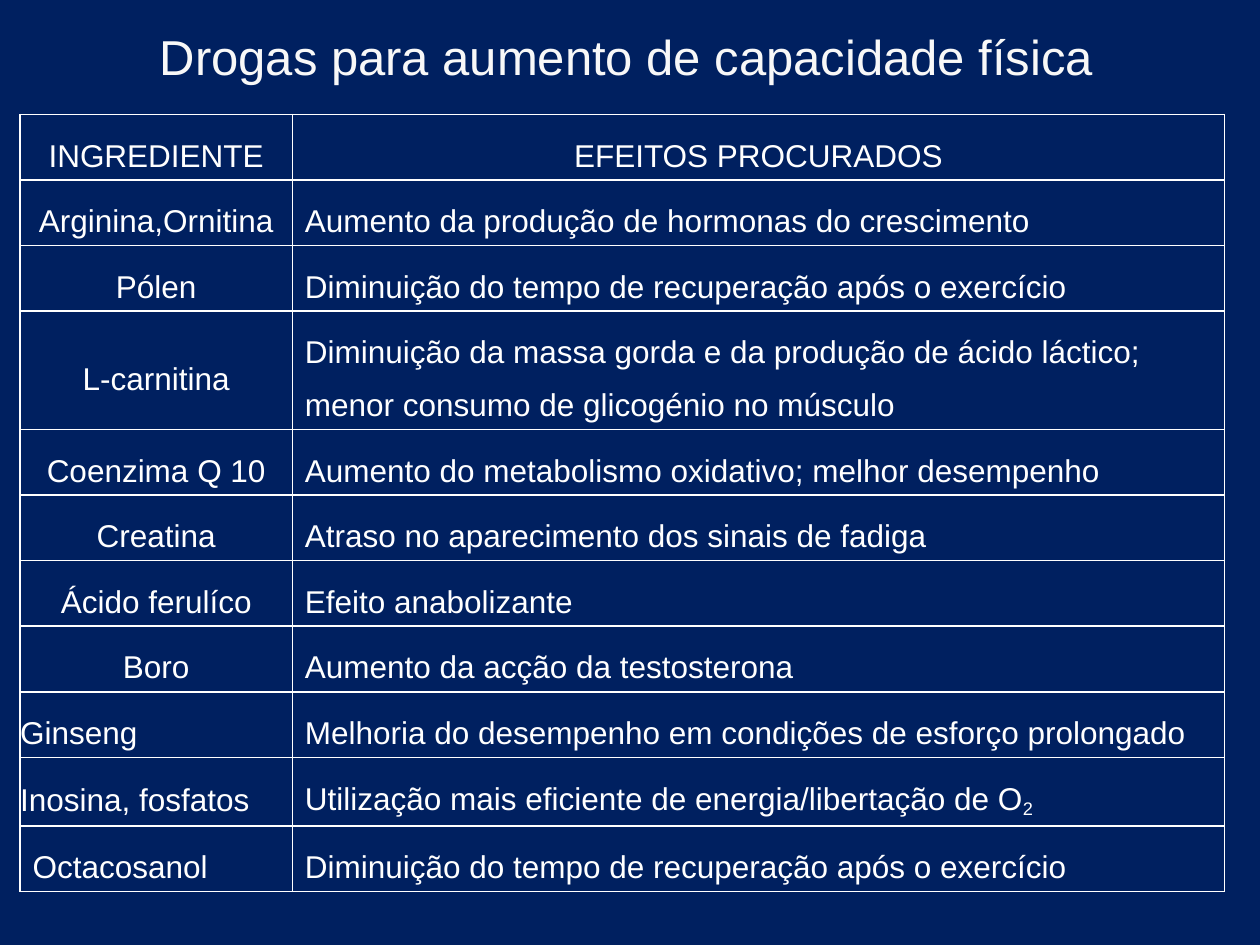
from dataclasses import dataclass

from lxml import etree
from pptx import Presentation
from pptx.dml.color import RGBColor
from pptx.enum.text import MSO_ANCHOR, PP_ALIGN
from pptx.oxml.ns import qn
from pptx.util import Inches, Pt

LEFT, MID, JUST = PP_ALIGN.LEFT, PP_ALIGN.CENTER, PP_ALIGN.JUSTIFY
TOP, CENTER = MSO_ANCHOR.TOP, MSO_ANCHOR.MIDDLE
FONT = "Arial"
NAVY, WHITE, PALE = "002060", "FFFFFF", "F8F8F8"
WIDTHS = (2.16, 7.4)
ROW, TALL = 0.49, 0.94


@dataclass
class Entry:
    text: str
    align: PP_ALIGN = LEFT
    anchor: MSO_ANCHOR = CENTER
    inset: bool = True
    sub: str = ""


@dataclass
class Row:
    name: Entry
    effect: Entry
    height: float = ROW


def flush(text: str, align: PP_ALIGN = MID) -> Entry:
    """Describe an ingredient cell without margins."""
    return Entry(text, align, inset=False)


def upper(text: str) -> Entry:
    """Describe an effect cell anchored at the top."""
    return Entry(text, anchor=TOP)


ROWS = [
    Row(Entry("INGREDIENTE", MID), Entry("EFEITOS PROCURADOS", MID)),
    Row(Entry("Arginina,Ornitina", MID, TOP),
        Entry("Aumento da produção de hormonas do crescimento")),
    Row(flush("Pólen"),
        upper("Diminuição do tempo de recuperação após o exercício")),
    Row(flush("L-carnitina"),
        upper("Diminuição da massa gorda e da produção de ácido láctico; "
              "menor consumo de glicogénio no músculo"), TALL),
    Row(flush("Coenzima Q 10"),
        upper("Aumento do metabolismo oxidativo; melhor desempenho")),
    Row(flush("Creatina"),
        upper("Atraso no aparecimento dos sinais de fadiga")),
    Row(flush("Ácido ferulíco"), upper("Efeito anabolizante")),
    Row(flush("Boro"), upper("Aumento da acção da testosterona")),
    Row(flush("Ginseng", LEFT),
        Entry("Melhoria do desempenho em condições de esforço prolongado",
              JUST)),
    Row(flush("Inosina, fosfatos", LEFT),
        Entry("Utilização mais eficiente de energia/libertação de O",
              JUST, sub="2")),
    Row(Entry("Octacosanol"),
        Entry("Diminuição do tempo de recuperação após o exercício", JUST)),
]


def rgb(code: str) -> RGBColor:
    return RGBColor.from_string(code)


def style(para, size: float, code: str) -> None:
    for run in para.runs:
        run.font.name = FONT
        run.font.size = Pt(size)
        run.font.color.rgb = rgb(code)


def add_edges(cell) -> None:
    props = cell._tc.get_or_add_tcPr()
    for spot, tag in enumerate(("a:lnL", "a:lnR", "a:lnT", "a:lnB")):
        line = etree.Element(qn(tag), w=str(Pt(1)))
        fill = etree.SubElement(line, qn("a:solidFill"))
        etree.SubElement(fill, qn("a:srgbClr"), val=WHITE)
        props.insert(spot, line)


def fill_cell(cell, entry: Entry) -> None:
    cell.fill.background()
    add_edges(cell)
    cell.vertical_anchor = entry.anchor
    side, edge = (0.1, 0.05) if entry.inset else (0, 0)
    cell.margin_left = cell.margin_right = Inches(side)
    cell.margin_top = cell.margin_bottom = Inches(edge)
    para = cell.text_frame.paragraphs[0]
    para.text = entry.text
    para.alignment = entry.align
    para.line_spacing = 1.5
    if entry.sub:
        run = para.add_run()
        run.text = entry.sub
        run._r.get_or_add_rPr().set("baseline", "-16000")
    style(para, 18, WHITE)


def add_title(slide) -> None:
    title = slide.shapes.title
    title.left, title.top = Inches(0.47), Inches(-0.03)
    title.width, title.height = Inches(9), Inches(0.94)
    frame = title.text_frame
    frame.text = "Drogas para aumento de capacidade física"
    frame.vertical_anchor = CENTER
    para = frame.paragraphs[0]
    para.alignment = MID
    style(para, 28, PALE)


def add_grid(slide) -> None:
    height = sum(row.height for row in ROWS)
    table = slide.shapes.add_table(
        len(ROWS), len(WIDTHS), Inches(0.16), Inches(0.91),
        Inches(sum(WIDTHS)), Inches(height)).table
    table.first_row = table.horz_banding = False
    for col, width in zip(table.columns, WIDTHS):
        col.width = Inches(width)
    for line, row in zip(table.rows, ROWS):
        line.height = Inches(row.height)
        for cell, entry in zip(line.cells, (row.name, row.effect)):
            fill_cell(cell, entry)


def main() -> None:
    deck = Presentation()
    deck.slide_width, deck.slide_height = Inches(10), Inches(7.5)
    slide = deck.slides.add_slide(deck.slide_layouts.get_by_name("Title Only"))
    back = slide.background.fill
    back.solid()
    back.fore_color.rgb = rgb(NAVY)
    add_title(slide)
    add_grid(slide)
    deck.save("out.pptx")


if __name__ == "__main__":
    main()
